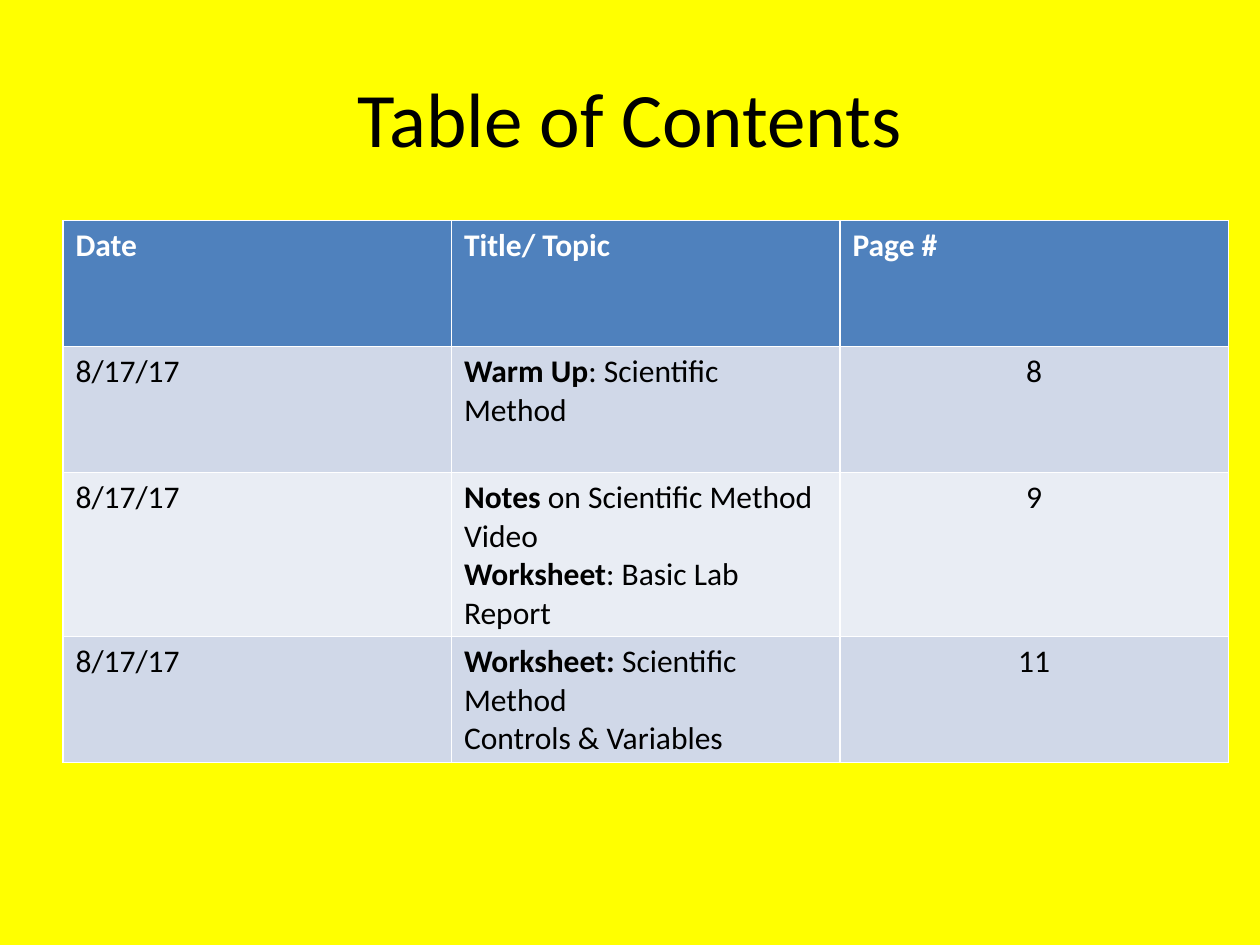
from pptx import Presentation
from pptx.dml.color import RGBColor
from pptx.enum import text
from pptx.util import Pt

TITLE = "Table of Contents"
HEADERS = ["Date", "Title/ Topic", "Page #"]
ENTRIES = [
    ("8/17/17", [("Warm Up", ": Scientific Method")], "8"),
    ("8/17/17", [("Notes ", "on Scientific Method Video"),
                 ("Worksheet", ": Basic Lab Report")], "9"),
    ("8/17/17", [("Worksheet:", " Scientific Method"),
                 ("", "Controls & Variables")], "11"),
]
FONT = "Calibri"
BLACK, WHITE, YELLOW = "000000", "FFFFFF", "FFFF00"
HEADER_FILL = "4F81BD"
BAND_FILLS = ["D0D8E8", "E9EDF4"]
LEFT, TOP, COLUMN_WIDTH, ROW_HEIGHT = 36, 126, 222, 72


def paint(fill, color):
    fill.solid()
    fill.fore_color.rgb = RGBColor.from_string(color)


def write(text_frame, lines, size, color, align=text.PP_ALIGN.LEFT):
    for index, line in enumerate(lines):
        paragraph = text_frame.add_paragraph() if index else text_frame.paragraphs[0]
        paragraph.alignment = align
        for words, bold in zip(line, (True, False)):
            if words:
                run = paragraph.add_run()
                run.text = words
                run.font.name = FONT
                run.font.size = Pt(size)
                run.font.bold = bold
                run.font.color.rgb = RGBColor.from_string(color)


def add_title(slide):
    text_frame = slide.shapes.add_textbox(Pt(36), Pt(21.6), Pt(648), Pt(90)).text_frame
    text_frame.word_wrap = True
    text_frame.vertical_anchor = text.MSO_ANCHOR.MIDDLE
    write(text_frame, [("", TITLE)], 44, BLACK, text.PP_ALIGN.CENTER)


def add_contents(slide):
    rows, columns = len(ENTRIES) + 1, len(HEADERS)
    table = slide.shapes.add_table(
        rows, columns, Pt(LEFT), Pt(TOP),
        Pt(COLUMN_WIDTH * columns), Pt(ROW_HEIGHT * rows)).table
    for column, header in enumerate(HEADERS):
        cell = table.cell(0, column)
        paint(cell.fill, HEADER_FILL)
        write(cell.text_frame, [(header, "")], 18, WHITE)
    for row, (date, topics, page) in enumerate(ENTRIES, 1):
        for cell in table.rows[row].cells:
            paint(cell.fill, BAND_FILLS[(row - 1) % 2])
        write(table.cell(row, 0).text_frame, [("", date)], 18, BLACK)
        write(table.cell(row, 1).text_frame, topics, 18, BLACK)
        write(table.cell(row, 2).text_frame, [("", page)], 18, BLACK,
              text.PP_ALIGN.CENTER)


def main():
    presentation = Presentation()
    presentation.slide_width, presentation.slide_height = Pt(720), Pt(540)
    slide = presentation.slides.add_slide(presentation.slide_layouts[6])
    paint(slide.background.fill, YELLOW)
    add_title(slide)
    add_contents(slide)
    presentation.save("out.pptx")


if __name__ == "__main__":
    main()
